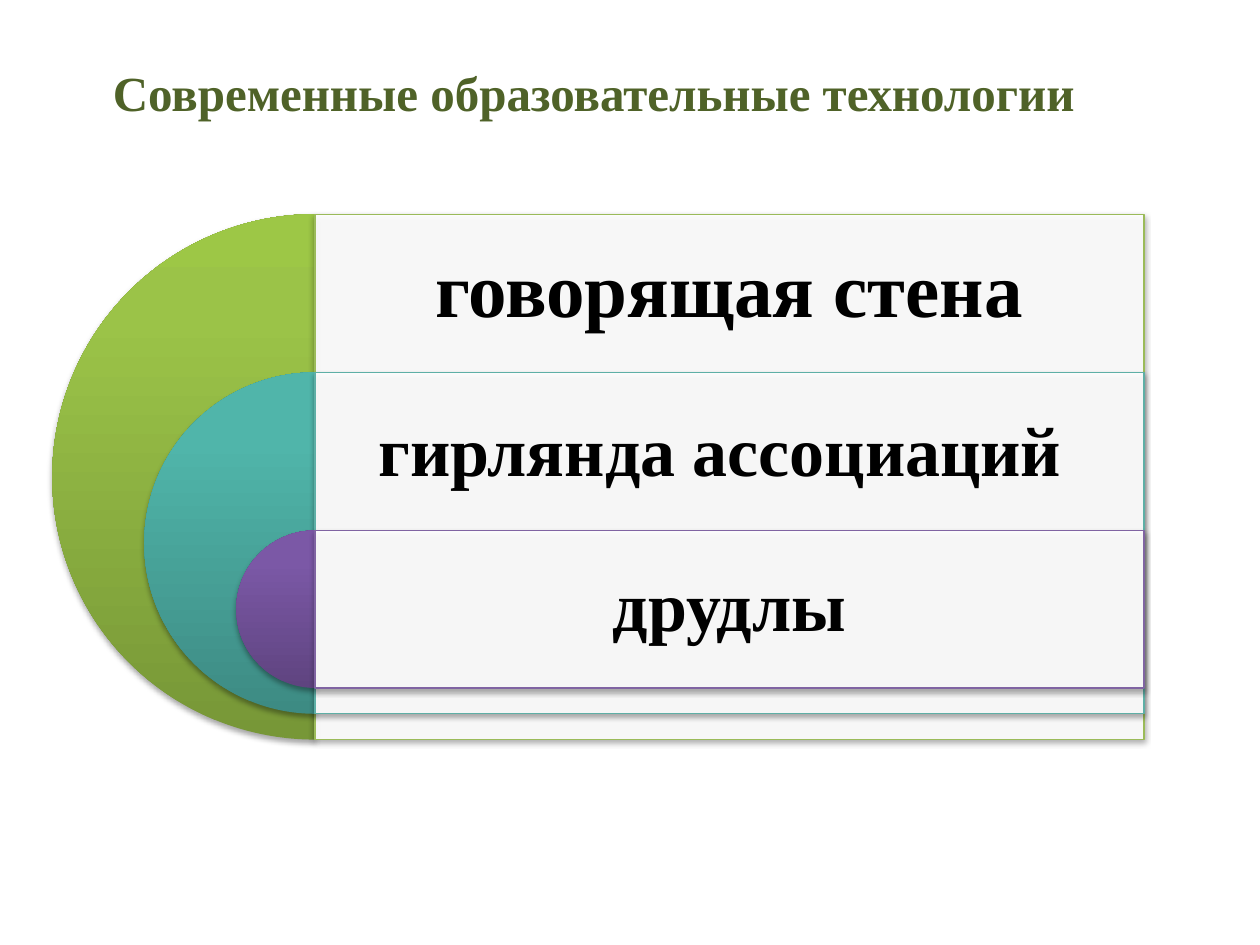
import copy

import pptx
import pptx.dml.color
import pptx.enum.shapes
import pptx.enum.text
import pptx.oxml
import pptx.oxml.ns
import pptx.util

Inches = pptx.util.Inches
Pt = pptx.util.Pt
RGB = pptx.dml.color.RGBColor.from_string
SHAPE = pptx.enum.shapes.MSO_SHAPE
ALIGN = pptx.enum.text.PP_ALIGN
ANCHOR = pptx.enum.text.MSO_ANCHOR
qn = pptx.oxml.ns.qn

THEME = {
    "font": "Times New Roman",
    "title": ("4F6228", 28),
    "label": "000000",
    "panel": "FFFFFF",
    # gradient from bottom to top, then the panel outline
    "levels": [
        (("779737", "9BC348", "9DC746"), "9BBB59"),
        (("3D8B83", "50B5AA", "4EB8AC"), "5EAFA6"),
        (("5F4480", "7B58A6", "7C57A8"), "8064A2"),
    ],
}
# Each technology: runs of text with their sizes
TECHNOLOGIES = [
    [("говорящая стена", 44)],
    [("гирлянда ассоциаций", 40), (" ", 44)],
    [("друдлы", 40)],
]


def add_shadow(shape):
    shape.shadow.inherit = False
    effects = shape._element.spPr.find(qn("a:effectLst"))
    effects.append(pptx.oxml.parse_xml(
        '<a:outerShdw xmlns:a="http://schemas.openxmlformats.org/drawingml/2006/main" '
        'blurRad="39370" dist="22860" dir="5400000" rotWithShape="0">'
        '<a:srgbClr val="000000"><a:alpha val="35000"/></a:srgbClr></a:outerShdw>'))


def write_line(frame, runs, color, anchor):
    frame.word_wrap = True
    frame.auto_size = pptx.enum.text.MSO_AUTO_SIZE.NONE
    frame.vertical_anchor = anchor
    line = frame.paragraphs[0]
    line.alignment = ALIGN.CENTER
    line.line_spacing = 0.9
    for text, size in runs:
        run = line.add_run()
        run.text = text
        run.font.name = THEME["font"]
        run.font.size = Pt(size)
        run.font.bold = True
        run.font.color.rgb = RGB(color)


deck = pptx.Presentation()
deck.slide_width, deck.slide_height = Inches(10), Inches(7.5)
slide = deck.slides.add_slide(deck.slide_layouts[5])

# Title
title = slide.shapes.title
title.left, title.top = Inches(0.43), Inches(0.44)
title.width, title.height = Inches(8.66), Inches(0.58)
title_color, title_size = THEME["title"]
write_line(title.text_frame, [("Современные образовательные технологии ", title_size)],
           title_color, ANCHOR.BOTTOM)

# Nested levels: half discs centred on the panels' left edge
AXIS, TOP, PANEL_WIDTH = 2.5, 1.7, 6.58
ROW_STEP, ROW_HEIGHT = 1.255, 1.25
OUTER, SHRINK = 4.17, 1.46
diagram = slide.shapes.add_group_shape().shapes

for row, (runs, (gradient, outline)) in enumerate(zip(TECHNOLOGIES, THEME["levels"])):
    top = Inches(TOP + row * ROW_STEP)
    diameter = OUTER - row * SHRINK

    # Half disc
    disc = diagram.add_shape(SHAPE.PIE, Inches(AXIS - diameter / 2), top,
                             Inches(diameter), Inches(diameter))
    disc.adjustments[0], disc.adjustments[1] = 54, 162
    disc.line.fill.background()
    disc.fill.gradient()
    disc.fill.gradient_angle = 90
    stops = disc._element.spPr.find(qn("a:gradFill")).find(qn("a:gsLst"))
    stops.insert(1, copy.deepcopy(stops[0]))
    for stop, position, color in zip(disc.fill.gradient_stops, (0, 0.8, 1), gradient):
        stop.position = position
        stop.color.rgb = RGB(color)
    add_shadow(disc)

    # Translucent panel
    panel = diagram.add_shape(SHAPE.RECTANGLE, Inches(AXIS), top,
                              Inches(PANEL_WIDTH), Inches(diameter))
    panel.fill.solid()
    panel.fill.fore_color.rgb = RGB(THEME["panel"])
    panel_color = panel._element.spPr.find(qn("a:solidFill"))[0]
    panel_color.append(panel_color.makeelement(qn("a:alpha"), {"val": "90000"}))
    panel.line.color.rgb = RGB(outline)
    panel.line.width = Pt(0.75)
    add_shadow(panel)

    # Label in the panel's visible band
    label = diagram.add_textbox(Inches(AXIS), top, Inches(PANEL_WIDTH), Inches(ROW_HEIGHT))
    frame = label.text_frame
    frame.margin_left = frame.margin_right = Inches(0.17)
    frame.margin_top = frame.margin_bottom = Inches(0.17)
    write_line(frame, runs, THEME["label"], ANCHOR.MIDDLE)

deck.save("out.pptx")
